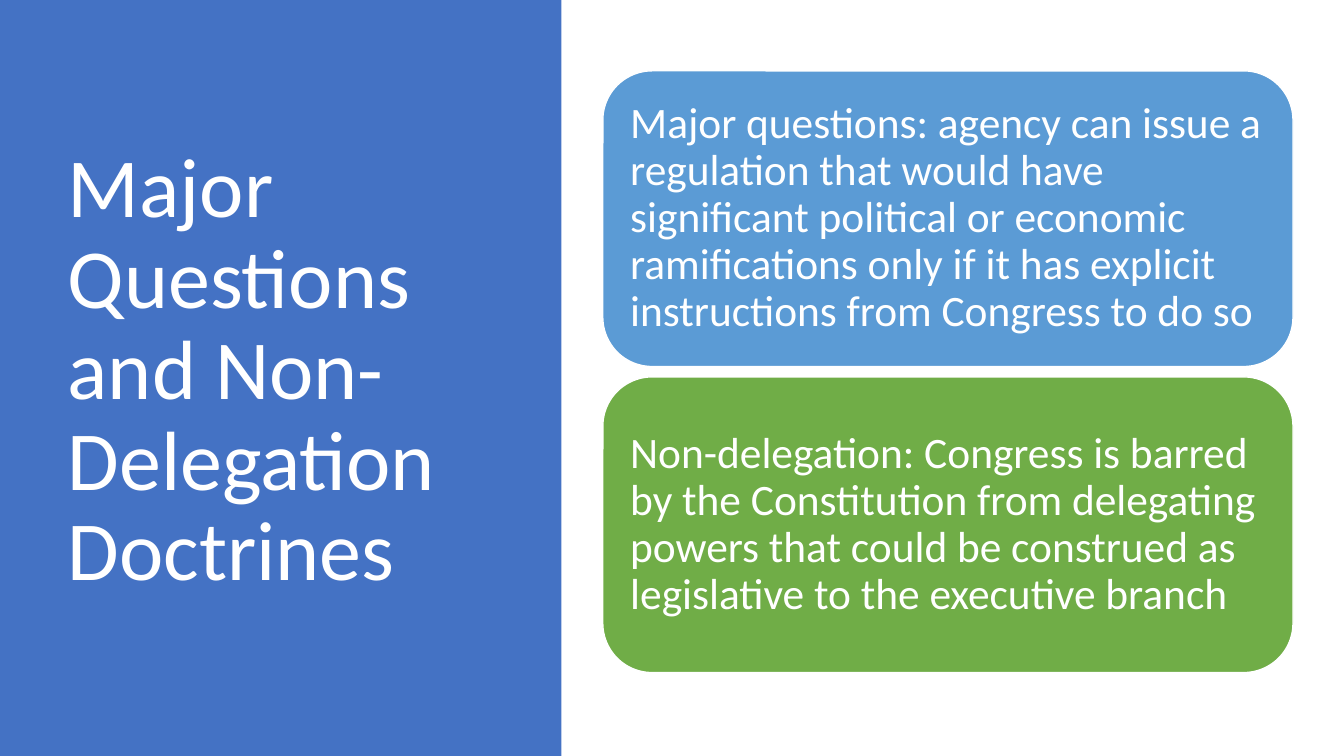
"""Build a slide with a title panel and two doctrine cards."""
from dataclasses import dataclass

from pptx import Presentation
from pptx.dml.color import RGBColor
from pptx.enum.shapes import MSO_SHAPE as Shape
from pptx.enum.text import MSO_ANCHOR as Anchor, PP_ALIGN as Align
from pptx.util import Pt


@dataclass(frozen=True)
class Theme:
    font: str = "Calibri"
    white: RGBColor = RGBColor(0xFF, 0xFF, 0xFF)
    panel: RGBColor = RGBColor(0x44, 0x72, 0xC4)
    blue: RGBColor = RGBColor(0x5B, 0x9B, 0xD5)
    green: RGBColor = RGBColor(0x70, 0xAD, 0x47)
    title_size: int = 60
    body_size: int = 31


theme = Theme()


def add_block(slide, preset, left, top, width, height, color):
    shape = slide.shapes.add_shape(preset, Pt(left), Pt(top), Pt(width), Pt(height))
    shape.shadow.inherit = False
    shape.fill.solid()
    shape.fill.fore_color.rgb = color
    shape.line.fill.background()
    return shape


def write_text(shape, text, size):
    frame = shape.text_frame
    frame.word_wrap = True
    frame.vertical_anchor = Anchor.MIDDLE
    paragraph = frame.paragraphs[0]
    paragraph.alignment = Align.LEFT
    paragraph.line_spacing = 0.9
    run = paragraph.add_run()
    run.text = text
    run.font.name = theme.font
    run.font.size = Pt(size)
    run.font.color.rgb = theme.white
    return frame


presentation = Presentation()
presentation.slide_width = Pt(960)
presentation.slide_height = Pt(540)
slide = presentation.slides.add_slide(presentation.slide_layouts[6])

add_block(slide, Shape.RECTANGLE, 0, 0, 401, 540, theme.panel)
title = slide.shapes.add_textbox(Pt(41.3), Pt(49), Pt(299.5), Pt(433.5))
write_text(title, "Major Questions and Non-Delegation Doctrines", theme.title_size)

cards = [
    (theme.blue, "Major questions: agency can issue a regulation that would have "
     "significant political or economic ramifications only if it has explicit "
     "instructions from Congress to do so"),
    (theme.green, "Non-delegation: Congress is barred by the Constitution from "
     "delegating powers that could be construed as legislative to the "
     "executive branch"),
]
card_top, card_height, card_gap = 50.6, 211.2, 7.4

for index, (color, text) in enumerate(cards):
    top = card_top + index * (card_height + card_gap)
    card = add_block(slide, Shape.ROUNDED_RECTANGLE, 430.6, top, 493, card_height, color)
    card.line.color.rgb = theme.white
    card.line.width = Pt(1)
    frame = write_text(card, text, theme.body_size)
    frame.margin_left = frame.margin_right = Pt(9.3)
    frame.margin_top = frame.margin_bottom = Pt(9.3)

presentation.save("out.pptx")
